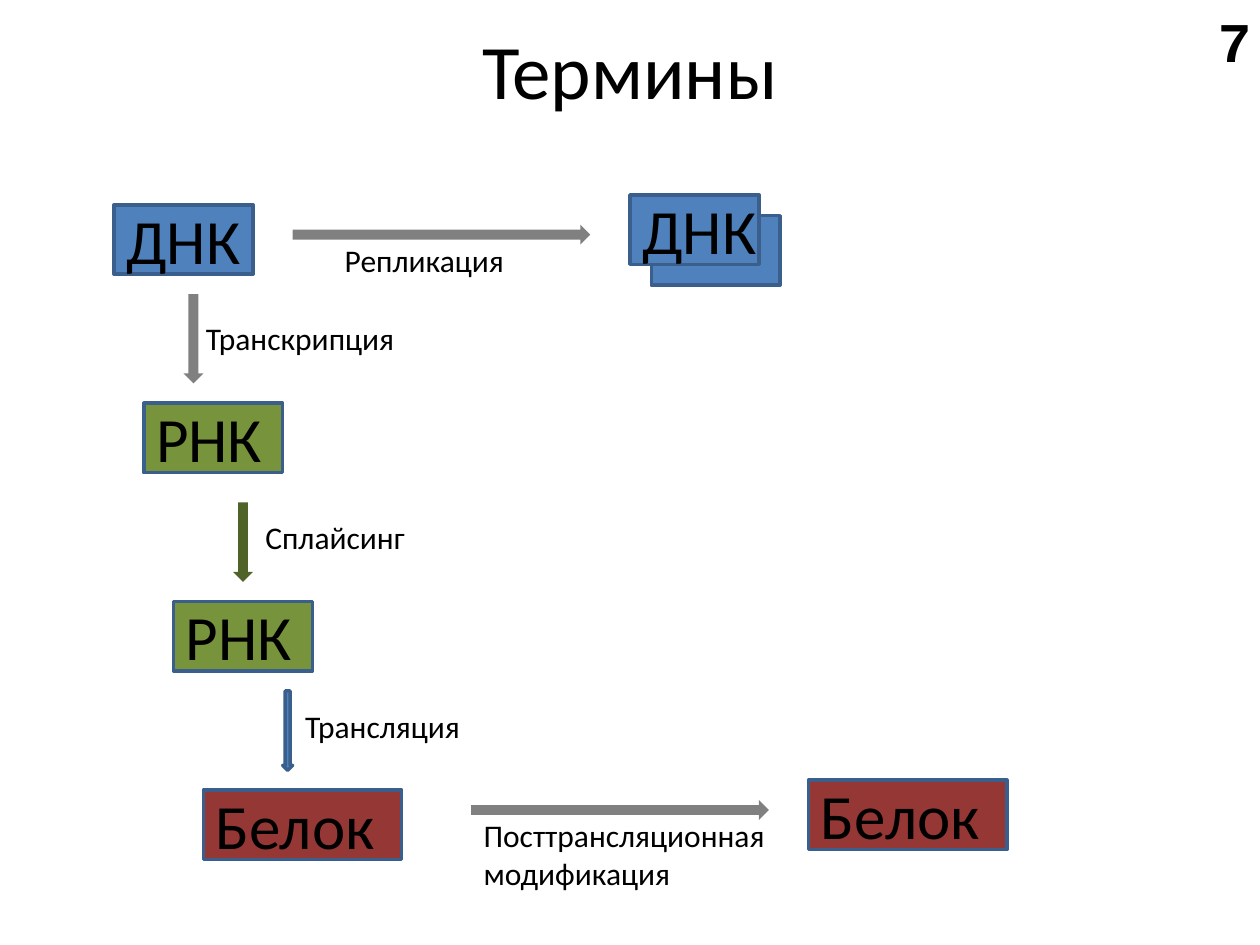
from dataclasses import dataclass

from pptx import Presentation
from pptx.dml.color import RGBColor
from pptx.enum import shapes, text
from pptx.util import Cm, Pt


@dataclass(frozen=True)
class Theme:
    font: str = "Calibri"
    number_font: str = "Courier New"
    ink: str = "000000"
    outline: str = "3A5F8C"
    dna: str = "4F81BD"
    rna: str = "77933C"
    protein: str = "953735"
    grey: str = "808080"
    dark_green: str = "4F6228"
    title_size: int = 44
    molecule_size: int = 36
    number_size: int = 32
    label_size: int = 18


THEME = Theme()
BOX_HEIGHT = 1.4
RIGHT = shapes.MSO_SHAPE.RIGHT_ARROW
DOWN = shapes.MSO_SHAPE.DOWN_ARROW

# name, fill, left, top, width
MOLECULES = [
    ("ДНК", THEME.dna, 2.3, 4.13, 2.8),
    ("ДНК", THEME.dna, 12.7, 3.93, 2.6),
    ("РНК", THEME.rna, 2.9, 8.13, 2.8),
    ("РНК", THEME.rna, 3.5, 12.13, 2.8),
    ("Белок", THEME.protein, 4.1, 15.93, 4),
    ("Белок", THEME.protein, 16.3, 15.73, 4),
]

# kind, fill, outline, left, top, width, height
ARROWS = [
    (RIGHT, THEME.grey, None, 5.9, 4.53, 6, 0.4),
    (DOWN, THEME.grey, None, 3.7, 5.93, 0.4, 1.8),
    (DOWN, THEME.dark_green, None, 4.7, 10.13, 0.4, 1.6),
    (DOWN, THEME.dna, THEME.outline, 5.7, 13.93, 0.2, 1.6),
    (RIGHT, THEME.grey, None, 9.5, 16.13, 6, 0.4),
]

# wording, left, top, width, height
LABELS = [
    ("Репликация", 6.7, 4.73, 4, 1.02),
    ("Транскрипция", 3.9, 6.31, 4.6, 1.02),
    ("Сплайсинг", 5.1, 10.32, 4.6, 1.02),
    ("Трансляция", 5.9, 14.13, 4.6, 1.02),
    ("Посттрансляционная модификация", 9.5, 16.33, 6.2, 1.8),
]


def add_span(para, wording, size, font=THEME.font, bold=False):
    span = para.add_run()
    span.text = wording
    span.font.name = font
    span.font.size = Pt(size)
    span.font.bold = bold
    span.font.color.rgb = RGBColor.from_string(THEME.ink)


def add_title(page, wording):
    title = page.shapes.title
    title.left, title.top = Cm(1.27), Cm(-0.2)
    title.width, title.height = Cm(22.86), Cm(3.18)
    title.text_frame.vertical_anchor = text.MSO_ANCHOR.MIDDLE
    para = title.text_frame.paragraphs[0]
    para.alignment = text.PP_ALIGN.CENTER
    add_span(para, wording, THEME.title_size)


def add_text(page, wording, left, top, width, height, size, **style):
    box = page.shapes.add_textbox(Cm(left), Cm(top), Cm(width), Cm(height))
    box.text_frame.word_wrap = True
    box.text_frame.auto_size = text.MSO_AUTO_SIZE.SHAPE_TO_FIT_TEXT
    add_span(box.text_frame.paragraphs[0], wording, size, **style)


def add_filled(page, kind, fill, outline, left, top, width, height):
    """Add a preset shape; without an outline colour it has no line."""
    shape = page.shapes.add_shape(kind, Cm(left), Cm(top), Cm(width), Cm(height))
    shape.shadow.inherit = False
    shape.fill.solid()
    shape.fill.fore_color.rgb = RGBColor.from_string(fill)
    if outline:
        shape.line.color.rgb = RGBColor.from_string(outline)
        shape.line.width = Pt(2)
    else:
        shape.line.fill.background()


def add_box(page, fill, left, top, width):
    add_filled(page, shapes.MSO_SHAPE.RECTANGLE, fill, THEME.outline,
               left, top, width, BOX_HEIGHT)


def add_molecule(page, name, fill, left, top, width):
    """Add a box with its name, whose text area is taller than the box."""
    add_box(page, fill, left, top, width)
    add_text(page, name, left, top - 0.2, max(width, 3.6), BOX_HEIGHT + 0.4,
             THEME.molecule_size)


def main():
    deck = Presentation()
    deck.slide_width, deck.slide_height = Cm(25.4), Cm(19.05)
    page = deck.slides.add_slide(deck.slide_layouts[5])

    add_title(page, "Термины")
    add_text(page, "7", 24.3, 0, 0.9, 1.63, THEME.number_size,
             font=THEME.number_font, bold=True)
    add_box(page, THEME.dna, 13.13, 4.35, 2.6)
    for molecule in MOLECULES:
        add_molecule(page, *molecule)
    for arrow in ARROWS:
        add_filled(page, *arrow)
    for label in LABELS:
        add_text(page, *label, THEME.label_size)

    deck.save("out.pptx")


if __name__ == "__main__":
    main()
